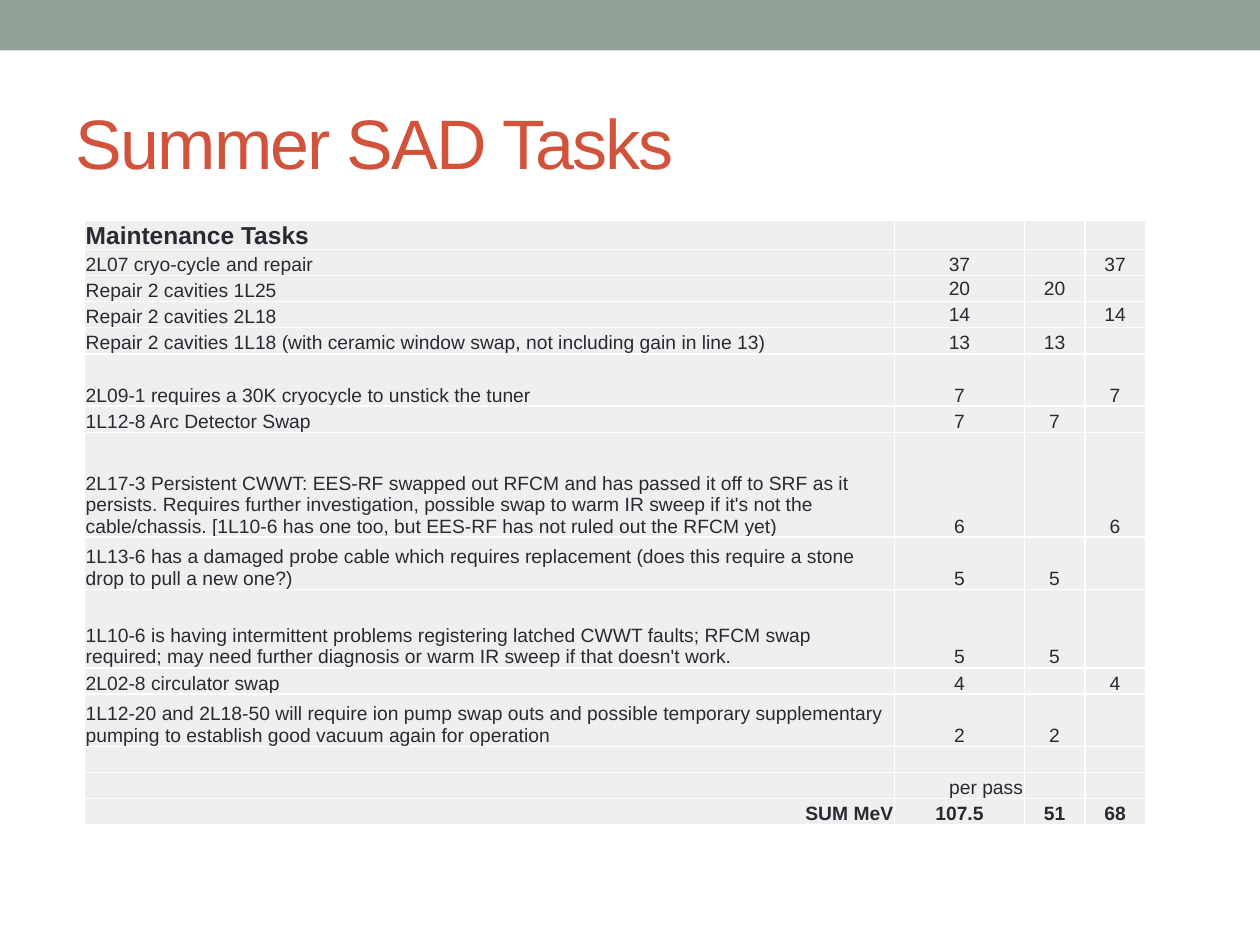
from lxml import etree
from pptx import Presentation
from pptx import util as u
from pptx.dml.color import RGBColor
from pptx.enum import shapes, text
from pptx.oxml import ns

SAGE = RGBColor(0x93, 0xA2, 0x99)
RUST = RGBColor(0xD2, 0x53, 0x3C)
INK = RGBColor(0x29, 0x29, 0x34)
MIST = RGBColor(0xEE, 0xF0, 0xEF)
WHITE = RGBColor(0xFF, 0xFF, 0xFF)

LEFT, CENTER, RIGHT = text.PP_ALIGN.LEFT, text.PP_ALIGN.CENTER, text.PP_ALIGN.RIGHT
BOTTOM, MIDDLE = text.MSO_ANCHOR.BOTTOM, text.MSO_ANCHOR.MIDDLE

COLUMN_WIDTHS = (6.43, 1.03, 0.48, 0.48)
TABLE_HEIGHT = 4.78

# Height in row units, then the texts of the four columns
TASKS = [
    (1, "Maintenance Tasks", "", "", ""),
    (1, "2L07 cryo-cycle and repair", "37", "", "37"),
    (1, "Repair 2 cavities 1L25", "20", "20", ""),
    (1, "Repair 2 cavities 2L18", "14", "", "14"),
    (1, "Repair 2 cavities 1L18 (with ceramic window swap, not including gain in line 13)",
     "13", "13", ""),
    (2, "2L09-1 requires a 30K cryocycle to unstick the tuner", "7", "", "7"),
    (1, "1L12-8 Arc Detector Swap", "7", "7", ""),
    (4, "2L17-3 Persistent CWWT: EES-RF swapped out RFCM and has passed it off to SRF as it "
        "persists. Requires further investigation, possible swap to warm IR sweep if it's not "
        "the cable/chassis. [1L10-6 has one too, but EES-RF has not ruled out the RFCM yet)",
     "6", "", "6"),
    (2, "1L13-6 has a damaged probe cable which requires replacement (does this require a "
        "stone drop to pull a new one?)", "5", "5", ""),
    (3, "1L10-6 is having intermittent problems registering latched CWWT faults; RFCM swap "
        "required; may need further diagnosis or warm IR sweep if that doesn't work.",
     "5", "5", ""),
    (1, "2L02-8 circulator swap", "4", "", "4"),
    (2, "1L12-20 and 2L18-50 will require ion pump swap outs and possible temporary "
        "supplementary pumping to establish good vacuum again for operation", "2", "2", ""),
    (1, "", "", "", ""),
    (1, "", "per pass", "", ""),
    (1, "SUM MeV", "107.5", "51", "68"),
]
BOLD_ROWS = (0, len(TASKS) - 1)
MIDDLE_ROWS = (2, 3)


def apply(target, values):
    for name, value in values.items():
        setattr(target, name, value)


class SlideBuilder:
    def __init__(self, presentation):
        self.width, self.height = presentation.slide_width, presentation.slide_height
        self.slide = presentation.slides.add_slide(presentation.slide_layouts[5])
        self.font = {"name": "Arial", "size": u.Pt(11), "bold": False}

    def styled_run(self, paragraph, content, color, **changes):
        run = paragraph.add_run()
        run.text = content
        apply(run.font, {**self.font, **changes})
        run.font.color.rgb = color
        return run

    def band(self, height_share):
        shape = self.slide.shapes.add_shape(
            shapes.MSO_SHAPE.RECTANGLE, 0, 0, self.width, int(self.height * height_share))
        shape.shadow.inherit = False
        shape.fill.solid()
        shape.fill.fore_color.rgb = SAGE
        shape.line.fill.background()

    def title(self, content, left, top, width, height):
        """Place the title; lengths are shares of the slide's size."""
        shape = self.slide.shapes.title
        apply(shape, {"left": int(self.width * left), "top": int(self.height * top),
                      "width": int(self.width * width), "height": int(self.height * height)})
        apply(shape.text_frame, {"vertical_anchor": MIDDLE, "word_wrap": True})
        paragraph = shape.text_frame.paragraphs[0]
        paragraph.alignment = LEFT
        run = self.styled_run(paragraph, content, RUST, size=u.Pt(40))
        run.font._element.set("spc", "-100")

    def table(self, rows, left, top):
        row_unit = TABLE_HEIGHT / sum(row[0] for row in rows)
        frame = self.slide.shapes.add_table(
            len(rows), len(COLUMN_WIDTHS), int(self.width * left), int(self.height * top),
            u.Inches(sum(COLUMN_WIDTHS)), u.Inches(TABLE_HEIGHT))
        table = frame.table
        apply(table, {"first_row": False, "horz_banding": False})
        for column, width in zip(table.columns, COLUMN_WIDTHS):
            column.width = u.Inches(width)
        for row_index, (units, *contents) in enumerate(rows):
            table.rows[row_index].height = u.Inches(row_unit * units)
            for column_index, content in enumerate(contents):
                self.cell(table.cell(row_index, column_index), content, row_index, column_index)

    def cell(self, cell, content, row, column):
        inset = u.Inches(0.01)
        in_middle = row in MIDDLE_ROWS and column > 0
        apply(cell, {"margin_left": inset, "margin_right": inset, "margin_top": inset,
                     "margin_bottom": 0, "vertical_anchor": MIDDLE if in_middle else BOTTOM})
        self.borders(cell)
        cell.fill.solid()
        cell.fill.fore_color.rgb = MIST
        paragraph = cell.text_frame.paragraphs[0]
        if not content:
            # An empty cell keeps its row low only with a small end-of-paragraph size
            etree.SubElement(paragraph._p, ns.qn("a:endParaRPr"), sz="1100")
            return
        if content in ("SUM MeV", "per pass"):
            paragraph.alignment = RIGHT
        else:
            paragraph.alignment = CENTER if column else LEFT
        self.styled_run(paragraph, content, INK, size=u.Pt(11 if row else 14),
                        bold=row in BOLD_ROWS)

    def borders(self, cell):
        properties = cell._tc.get_or_add_tcPr()
        for side in ("lnL", "lnR", "lnT", "lnB"):
            line = etree.SubElement(properties, ns.qn(f"a:{side}"), w=str(int(u.Pt(1))))
            fill = etree.SubElement(line, ns.qn("a:solidFill"))
            etree.SubElement(fill, ns.qn("a:srgbClr"), val=str(WHITE))


def main():
    presentation = Presentation()
    presentation.slide_width, presentation.slide_height = u.Inches(10), u.Inches(7.5)
    builder = SlideBuilder(presentation)
    builder.band(0.4 / 7.5)
    builder.title("Summer SAD Tasks", 0.05, 0.58 / 7.5, 0.9, 1.08 / 7.5)
    builder.table(TASKS, 0.67 / 10, 1.75 / 7.5)
    presentation.save("out.pptx")


if __name__ == "__main__":
    main()
